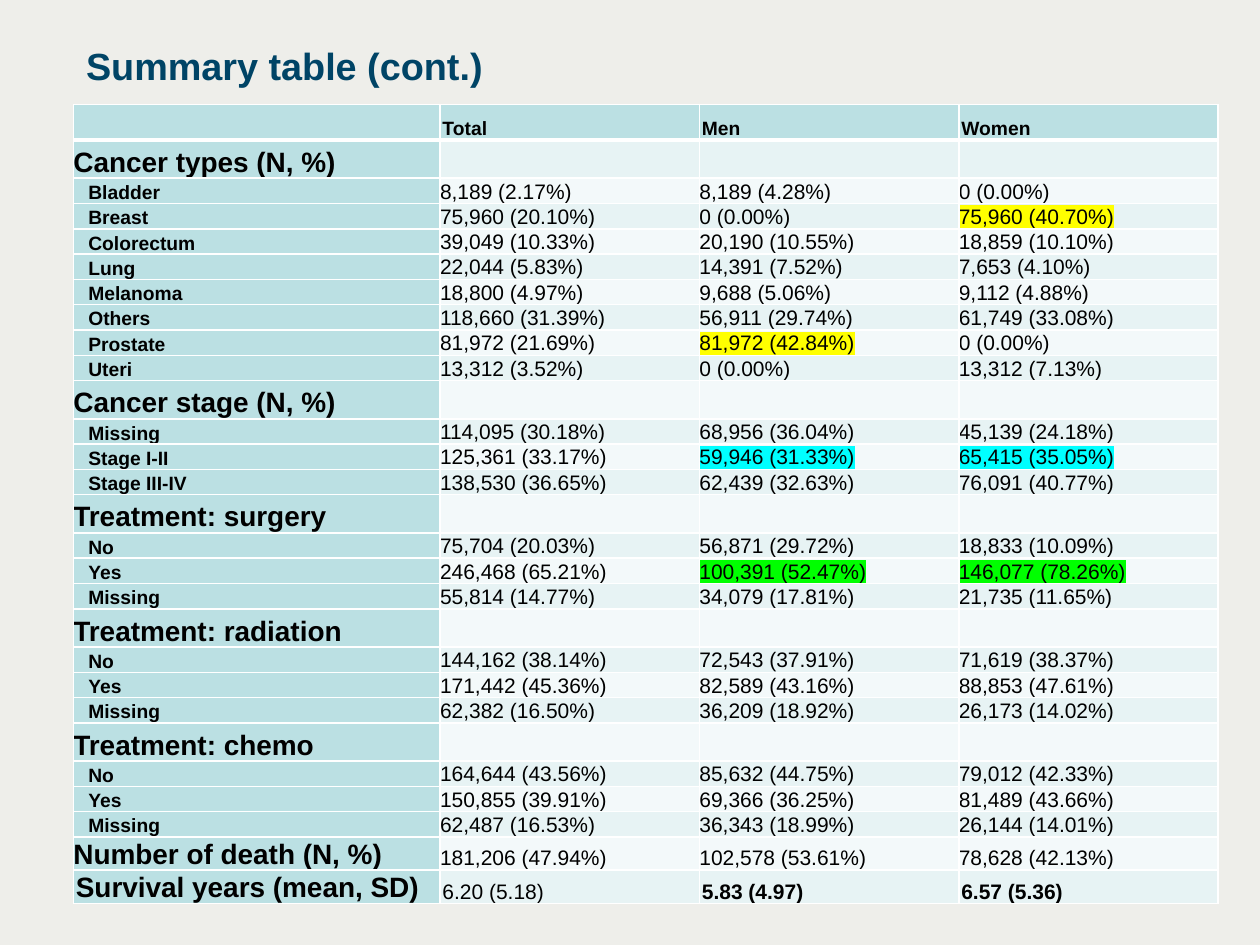
import pptx
import pptx.dml.color
import pptx.enum.text
import pptx.oxml
import pptx.oxml.ns
import pptx.util
from lxml import etree

Cm = pptx.util.Cm
FONT = "Arial"
COLORS = {
    "background": "EEEEEA", "title": "004466", "text": "000000", "border": "FFFFFF",
    "label": "BBE0E3", "dark band": "E7F3F4", "light band": "F3F9FA",
    "yellow": "FFFF00", "cyan": "00FFFF", "green": "00FF00",
}

HEADER = ("", "Total", "Men", "Women")
SECTIONS = {
    "Cancer types (N, %)": [
        ("Bladder", "8,189 (2.17%)", "8,189 (4.28%)", "0 (0.00%)"),
        ("Breast", "75,960 (20.10%)", "0 (0.00%)", "75,960 (40.70%)"),
        ("Colorectum", "39,049 (10.33%)", "20,190 (10.55%)", "18,859 (10.10%)"),
        ("Lung", "22,044 (5.83%)", "14,391 (7.52%)", "7,653 (4.10%)"),
        ("Melanoma", "18,800 (4.97%)", "9,688 (5.06%)", "9,112 (4.88%)"),
        ("Others", "118,660 (31.39%)", "56,911 (29.74%)", "61,749 (33.08%)"),
        ("Prostate", "81,972 (21.69%)", "81,972 (42.84%)", "0 (0.00%)"),
        ("Uteri", "13,312 (3.52%)", "0 (0.00%)", "13,312 (7.13%)"),
    ],
    "Cancer stage (N, %)": [
        ("Missing", "114,095 (30.18%)", "68,956 (36.04%)", "45,139 (24.18%)"),
        ("Stage I-II", "125,361 (33.17%)", "59,946 (31.33%)", "65,415 (35.05%)"),
        ("Stage III-IV", "138,530 (36.65%)", "62,439 (32.63%)", "76,091 (40.77%)"),
    ],
    "Treatment: surgery": [
        ("No", "75,704 (20.03%)", "56,871 (29.72%)", "18,833 (10.09%)"),
        ("Yes", "246,468 (65.21%)", "100,391 (52.47%)", "146,077 (78.26%)"),
        ("Missing", "55,814 (14.77%)", "34,079 (17.81%)", "21,735 (11.65%)"),
    ],
    "Treatment: radiation": [
        ("No", "144,162 (38.14%)", "72,543 (37.91%)", "71,619 (38.37%)"),
        ("Yes", "171,442 (45.36%)", "82,589 (43.16%)", "88,853 (47.61%)"),
        ("Missing", "62,382 (16.50%)", "36,209 (18.92%)", "26,173 (14.02%)"),
    ],
    "Treatment: chemo": [
        ("No", "164,644 (43.56%)", "85,632 (44.75%)", "79,012 (42.33%)"),
        ("Yes", "150,855 (39.91%)", "69,366 (36.25%)", "81,489 (43.66%)"),
        ("Missing", "62,487 (16.53%)", "36,343 (18.99%)", "26,144 (14.01%)"),
    ],
}
DEATHS = ("Number of death (N, %)", "181,206 (47.94%)", "102,578 (53.61%)", "78,628 (42.13%)")
SURVIVAL = ("Survival years (mean, SD)", "6.20 (5.18)", "5.83 (4.97)", "6.57 (5.36)")
HIGHLIGHTS = {
    "75,960 (40.70%)": "yellow", "81,972 (42.84%)": "yellow",
    "59,946 (31.33%)": "cyan", "65,415 (35.05%)": "cyan",
    "100,391 (52.47%)": "green", "146,077 (78.26%)": "green",
}
ROW_HEIGHTS = {"header": 0.69, "section": 0.77, "item": 0.51, "deaths": 0.67, "survival": 0.67}


def rgb(name):
    return pptx.dml.color.RGBColor.from_string(COLORS[name])


def write_text(frame, text, size, color="text", bold=False, spacing=None,
               indent=None, highlight=None):
    paragraph = frame.paragraphs[0]
    paragraph.alignment = pptx.enum.text.PP_ALIGN.LEFT
    paragraph.line_spacing = spacing
    if indent:
        properties = paragraph._p.get_or_add_pPr()
        properties.set("marL", "0")
        properties.set("indent", str(Cm(indent)))
    run = paragraph.add_run()
    run.text = text
    run.font.size = pptx.util.Pt(size)
    run.font.bold = bold
    run.font.name = FONT
    run.font.color.rgb = rgb(color)
    if highlight:
        mark = etree.Element(pptx.oxml.ns.qn("a:highlight"))
        etree.SubElement(mark, pptx.oxml.ns.qn("a:srgbClr"), val=COLORS[highlight])
        run._r.rPr.find(pptx.oxml.ns.qn("a:solidFill")).addnext(mark)


def set_borders(cell, bottom=1):
    properties = cell._tc.get_or_add_tcPr()
    for place, (side, points) in enumerate(
            [("lnL", 1), ("lnR", 1), ("lnT", 1), ("lnB", bottom)]):
        properties.insert(place, pptx.oxml.parse_xml(
            f'<a:{side} {pptx.oxml.ns.nsdecls("a")} w="{pptx.util.Pt(points)}"><a:solidFill>'
            f'<a:srgbClr val="{COLORS["border"]}"/></a:solidFill></a:{side}>'))


def cell_format(kind, column):
    """Text format by kind of row and by column."""
    if kind == "header":
        return {"size": 11, "bold": True}
    if column == 0:
        if kind == "item":
            return {"size": 11, "bold": True, "indent": 0.3}
        return {"size": 16, "bold": True}
    return {"size": 12, "bold": kind == "survival" and column > 1}


def table_rows():
    rows = [("header", HEADER)]
    for section, items in SECTIONS.items():
        rows.append(("section", (section, "", "", "")))
        rows += [("item", item) for item in items]
    return rows + [("deaths", DEATHS), ("survival", SURVIVAL)]


def add_title(slide, left, top, width, height):
    title = slide.shapes.title
    title.left, title.top, title.width, title.height = left, top, width, height
    title.text_frame.vertical_anchor = pptx.enum.text.MSO_ANCHOR.MIDDLE
    write_text(title.text_frame, "Summary table (cont.)", 21.6, color="title", bold=True)


def add_summary_table(slide, left, top, width, label_width):
    rows = table_rows()
    height = Cm(sum(ROW_HEIGHTS[kind] for kind, _ in rows))
    table = slide.shapes.add_table(len(rows), len(HEADER), left, top, width, height).table
    table.first_row = table.horz_banding = False

    # Label column, then equal value columns
    for number, column in enumerate(table.columns):
        column.width = label_width if number == 0 else (width - label_width) // 3

    for number, (kind, texts) in enumerate(rows):
        table.rows[number].height = Cm(ROW_HEIGHTS[kind])
        for column, text in enumerate(texts):
            cell = table.cell(number, column)
            side = Cm(0.05 if kind in ("header", "survival") else 0)
            cell.margin_left = cell.margin_right = side
            cell.margin_top = cell.margin_bottom = 0
            cell.vertical_anchor = pptx.enum.text.MSO_ANCHOR.BOTTOM
            set_borders(cell, bottom=3 if kind == "header" else 1)
            band = "dark band" if number % 2 else "light band"
            cell.fill.solid()
            cell.fill.fore_color.rgb = rgb("label" if kind == "header" or column == 0 else band)
            write_text(cell.text_frame, text, spacing=1.07,
                       highlight=HIGHLIGHTS.get(text), **cell_format(kind, column))


def main():
    deck = pptx.Presentation()
    deck.slide_width, deck.slide_height = Cm(25.4), Cm(19.05)
    slide = deck.slides.add_slide(deck.slide_layouts.get_by_name("Title Only"))
    slide.background.fill.solid()
    slide.background.fill.fore_color.rgb = rgb("background")
    add_title(slide, Cm(1.48), Cm(0.84), Cm(21.9), Cm(0.94))
    add_summary_table(slide, Cm(1.48), Cm(2.11), Cm(23.08), Cm(7.39))
    deck.save("out.pptx")


if __name__ == "__main__":
    main()
